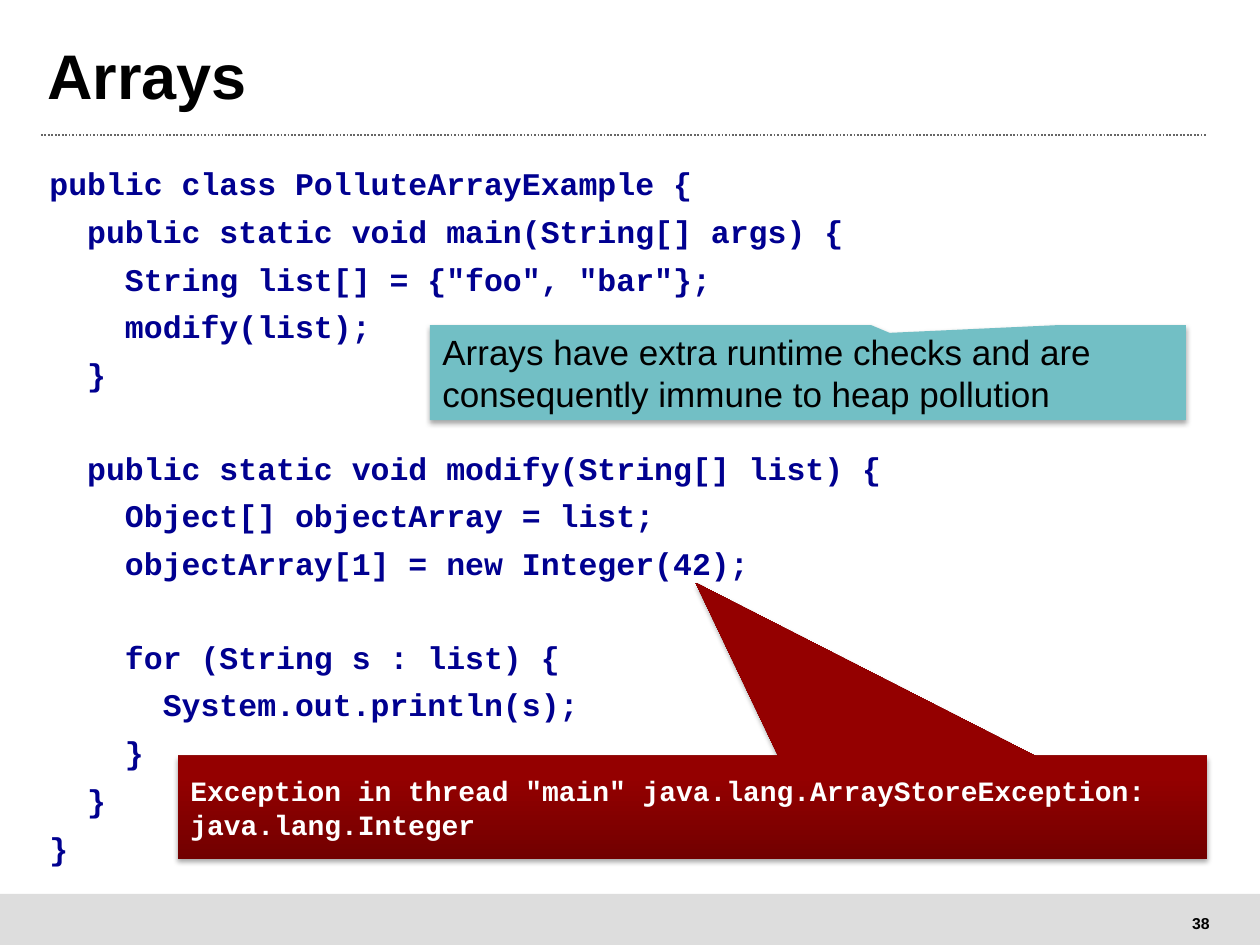
from lxml.etree import SubElement
from pptx import Presentation
from pptx.dml.color import RGBColor
from pptx.enum.dml import MSO_LINE
from pptx.enum.shapes import MSO_CONNECTOR, MSO_SHAPE
from pptx.enum.text import MSO_ANCHOR, PP_ALIGN
from pptx.oxml.ns import qn
from pptx.util import Pt

EMU_PER_PX = 914400 / 126

BLACK = RGBColor(0x00, 0x00, 0x00)
WHITE = RGBColor(0xFF, 0xFF, 0xFF)
NAVY = RGBColor(0x00, 0x00, 0x90)
TEAL = RGBColor(0x72, 0xBF, 0xC5)
RULE_GREY = RGBColor(0x66, 0x66, 0x66)
FOOTER_GREY = RGBColor(0xDD, 0xDD, 0xDD)
RED_STOPS = [
    (0, RGBColor(0x72, 0x00, 0x00)),
    (80, RGBColor(0x94, 0x00, 0x00)),
    (100, RGBColor(0x95, 0x00, 0x00)),
]

SANS = "Arial"
MONO = "Courier New"

TITLE = "Arrays"
PAGE_NUMBER = "38"
CODE_BLOCKS = [
    [
        "public class PolluteArrayExample {",
        "  public static void main(String[] args) {",
        '    String list[] = {"foo", "bar"};',
        "    modify(list);",
        "  }",
    ],
    [
        "  public static void modify(String[] list) {",
        "    Object[] objectArray = list;",
        "    objectArray[1] = new Integer(42);",
    ],
    [
        "    for (String s : list) {",
        "      System.out.println(s);",
        "    }",
        "  }",
        "}",
    ],
]
LINE_GAP = Pt(5.7)
BLOCK_GAP = Pt(31.8)

EXCEPTION = 'Exception in thread "main" java.lang.ArrayStoreException: java.lang.Integer'
REMARK = "Arrays have extra runtime checks and are consequently immune to heap pollution"


def px(*lengths):
    return [round(length * EMU_PER_PX) for length in lengths]


def add_run(paragraph, text, font_name, size, color, bold=True):
    run = paragraph.add_run()
    run.text = text
    run.font.name = font_name
    run.font.size = Pt(size)
    run.font.bold = bold
    run.font.color.rgb = color


def add_text_box(slide, box, anchor=MSO_ANCHOR.TOP, wrap=True):
    frame = slide.shapes.add_textbox(*px(*box)).text_frame
    frame.word_wrap = wrap
    frame.vertical_anchor = anchor
    return frame


def add_code(slide, box):
    frame = add_text_box(slide, box)
    paragraph = None
    for block in CODE_BLOCKS:
        for line in block:
            paragraph = frame.add_paragraph() if paragraph else frame.paragraphs[0]
            paragraph.space_after = BLOCK_GAP if line is block[-1] else LINE_GAP
            add_run(paragraph, line, MONO, 18, NAVY)


def add_shadow(shape):
    effects = SubElement(shape._element.spPr, qn("a:effectLst"))
    shadow = SubElement(effects, qn("a:outerShdw"), blurRad=str(Pt(3.1)),
                        dist=str(Pt(1.8)), dir="5400000", rotWithShape="0")
    color = SubElement(shadow, qn("a:srgbClr"), val=str(BLACK))
    SubElement(color, qn("a:alpha"), val="35000")


def fill_gradient(shape, stops):
    """Fill from bottom to top with (percent, colour) stops."""
    shape.fill.gradient()
    shape.fill.gradient_angle = 90
    stop_list = shape._element.spPr.find(".//" + qn("a:gsLst"))
    for old_stop in list(stop_list):
        stop_list.remove(old_stop)
    for percent, color in stops:
        stop = SubElement(stop_list, qn("a:gs"), pos=str(percent * 1000))
        SubElement(stop, qn("a:srgbClr"), val=str(color))


def add_callout(slide, box, tip):
    """Add a callout whose tip is offset from its centre in parts of its size."""
    shape = slide.shapes.add_shape(MSO_SHAPE.RECTANGULAR_CALLOUT, *px(*box))
    shape.adjustments[0], shape.adjustments[1] = tip
    shape.line.fill.background()
    add_shadow(shape)
    frame = shape.text_frame
    frame.word_wrap = True
    frame.vertical_anchor = MSO_ANCHOR.MIDDLE
    frame.paragraphs[0].alignment = PP_ALIGN.LEFT
    return shape


def add_frame(slide):
    footer = slide.shapes.add_shape(MSO_SHAPE.RECTANGLE, *px(0, 894, 1260, 51))
    footer.shadow.inherit = False
    footer.fill.solid()
    footer.fill.fore_color.rgb = FOOTER_GREY
    footer.line.fill.background()

    number = add_text_box(slide, (1179, 907, 44, 32), MSO_ANCHOR.MIDDLE, wrap=False)
    number.paragraphs[0].alignment = PP_ALIGN.CENTER
    add_run(number.paragraphs[0], PAGE_NUMBER, SANS, 9, BLACK)

    rule = slide.shapes.add_connector(MSO_CONNECTOR.STRAIGHT, *px(41, 135, 1207, 135))
    rule.line.color.rgb = RULE_GREY
    rule.line.width = Pt(1)
    rule.line.dash_style = MSO_LINE.ROUND_DOT
    SubElement(rule._element.spPr, qn("a:effectLst"))


def main():
    presentation = Presentation()
    presentation.slide_width, presentation.slide_height = px(1260, 945)
    slide = presentation.slides.add_slide(presentation.slide_layouts[6])
    add_frame(slide)

    title = add_text_box(slide, (35, 32, 1168, 98), MSO_ANCHOR.MIDDLE).paragraphs[0]
    title.line_spacing = 0.8
    add_run(title, TITLE, SANS, 36, BLACK)

    add_code(slide, (37, 158, 1223, 756))

    exception = add_callout(slide, (178, 756, 1029, 103), (0.003, -2.183))
    fill_gradient(exception, RED_STOPS)
    add_run(exception.text_frame.paragraphs[0], EXCEPTION, MONO, 16, WHITE)

    remark = add_callout(slide, (430, 325, 756, 95), (0.108, -0.417))
    remark.fill.solid()
    remark.fill.fore_color.rgb = TEAL
    add_run(remark.text_frame.paragraphs[0], REMARK, SANS, 20, BLACK, bold=False)

    presentation.save("out.pptx")


if __name__ == "__main__":
    main()
